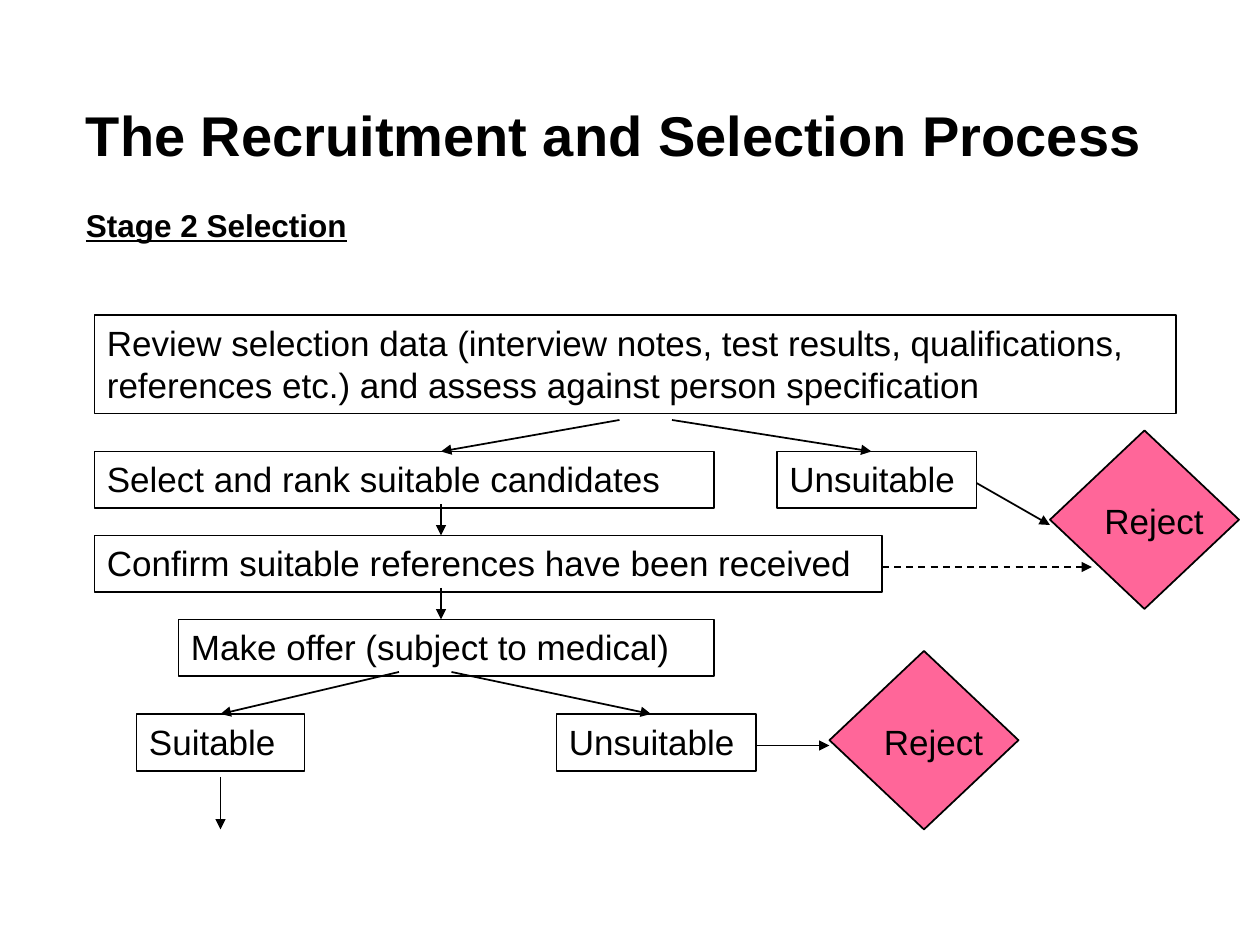
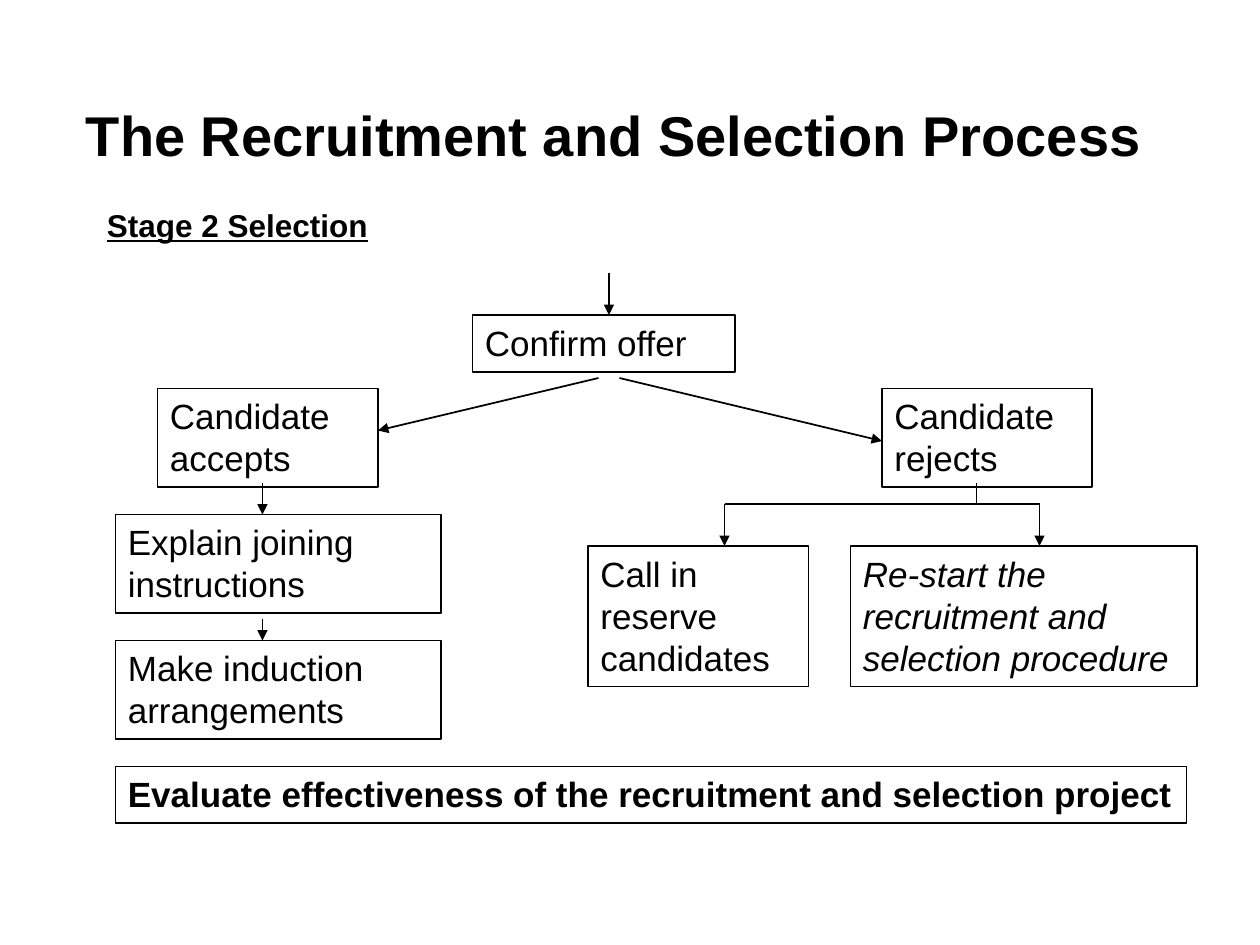
import pptx
import pptx.util
import pptx.dml.color
import pptx.enum.dml
import pptx.enum.shapes
import pptx.enum.text
import pptx.oxml.ns
import lxml.etree

SCALE = 7620
INK = "000000"
PINK = "FF6699"
FONT = "Arial"
KIND = pptx.enum.shapes.MSO_SHAPE


def px(n):
    return pptx.util.Emu(n * SCALE)


def color(code):
    return pptx.dml.color.RGBColor.from_string(code)


def write(shape, words, size=20, bold=False, italic=False, under=False):
    frame = shape.text_frame
    frame.word_wrap = True
    frame.vertical_anchor = pptx.enum.text.MSO_ANCHOR.TOP
    para = frame.paragraphs[0]
    para.alignment = pptx.enum.text.PP_ALIGN.LEFT
    run = para.add_run()
    run.text = words
    font = run.font
    font.name, font.size = FONT, pptx.util.Pt(size)
    font.bold, font.italic, font.underline = bold, italic, under
    font.color.rgb = color(INK)


def label(slide, x, y, w, h, words, **style):
    write(slide.shapes.add_textbox(px(x), px(y), px(w), px(h)), words, **style)


def outline(slide, kind, x, y, w, h, fill=None):
    shape = slide.shapes.add_shape(kind, px(x), px(y), px(w), px(h))
    shape.shadow.inherit = False
    if fill:
        shape.fill.solid()
        shape.fill.fore_color.rgb = color(fill)
    else:
        shape.fill.background()
    shape.line.color.rgb = color(INK)
    shape.line.width = pptx.util.Pt(1)
    return shape


def step(slide, x, y, w, words, rows=1, **style):
    box = outline(slide, KIND.RECTANGLE, x, y, w, 14 + 40 * rows)
    write(box, words, **style)


def link(slide, x, y, dx, dy, arrow=True, dash=False):
    line = slide.shapes.add_connector(
        pptx.enum.shapes.MSO_CONNECTOR.STRAIGHT,
        px(x), px(y), px(x + dx), px(y + dy))
    line.line.color.rgb = color(INK)
    line.line.width = pptx.util.Pt(1)
    if dash:
        line.line.dash_style = pptx.enum.dml.MSO_LINE.DASH
    qn = pptx.oxml.ns.qn
    if arrow:
        lxml.etree.SubElement(line.line._get_or_add_ln(), qn("a:tailEnd"), type="triangle")
    lxml.etree.SubElement(line._element.spPr, qn("a:effectLst"))


def reject(slide, x, y):
    outline(slide, KIND.FLOWCHART_DECISION, x, y, 180, 170, PINK)
    label(slide, x + 40, y + 60, 140, 52, "Reject")


def split(slide, x, y):
    link(slide, x, y, 0, 20, arrow=False)
    link(slide, x - 240, y + 20, 300, 0, arrow=False)
    for left in (x - 240, x + 60):
        link(slide, left, y + 20, 0, 40)


def header(slide, indent):
    label(slide, 70, 90, 1030, 76, "The Recruitment and Selection Process", size=32, bold=True)
    label(slide, indent, 190, 430, 60, "Stage 2 Selection", size=18, bold=True, under=True)


def review(slide, x, y):
    step(slide, x, y, 1030,
         "Review selection data (interview notes, test results, qualifications, "
         "references etc.) and assess against person specification", rows=2)
    step(slide, x, y + 130, 590, "Select and rank suitable candidates")
    step(slide, x + 650, y + 130, 190, "Unsuitable")
    step(slide, x, y + 210, 750, "Confirm suitable references have been received")
    reject(slide, x + 910, y + 110)
    link(slide, x + 500, y + 100, -170, 30)
    link(slide, x + 550, y + 100, 190, 30)
    link(slide, x + 840, y + 160, 70, 40)
    link(slide, x + 750, y + 240, 200, 0, dash=True)
    for top in (y + 180, y + 260):
        link(slide, x + 330, top, 0, 30)


def offer(slide, x, y):
    step(slide, x + 40, y, 510, "Make offer (subject to medical)")
    step(slide, x, y + 90, 160, "Suitable")
    step(slide, x + 400, y + 90, 190, "Unsuitable")
    reject(slide, x + 660, y + 30)
    link(slide, x + 250, y + 50, -170, 40)
    link(slide, x + 300, y + 50, 190, 40)
    link(slide, x + 590, y + 120, 70, 0)
    link(slide, x + 80, y + 150, 0, 50)


def confirm(slide, x, y):
    step(slide, x, y, 250, "Confirm offer")
    link(slide, x + 130, y - 40, 0, 40)
    link(slide, x + 120, y + 60, -210, 50)
    link(slide, x + 140, y + 60, 250, 60)


def accept(slide, x, y):
    step(slide, x + 40, y, 210, "Candidate accepts", rows=2)
    tasks = "Explain joining instructions", "Make induction arrangements"
    for i, task in enumerate(tasks, 1):
        step(slide, x, y + 120 * i, 310, task, rows=2)
    link(slide, x + 140, y + 90, 0, 30)
    link(slide, x + 140, y + 220, 0, 20)


def decline(slide, x, y):
    step(slide, x + 280, y, 200, "Candidate rejects", rows=2)
    step(slide, x, y + 150, 210, "Call in reserve candidates", rows=3)
    step(slide, x + 250, y + 150, 330,
         "Re-start the recruitment and selection procedure", rows=3, italic=True)
    split(slide, x + 370, y + 90)


def main():
    deck = pptx.Presentation()
    deck.slide_width, deck.slide_height = px(1200), px(900)
    blank = deck.slide_layouts[6]

    first = deck.slides.add_slide(blank)
    header(first, 70)
    review(first, 90, 300)
    offer(first, 130, 590)

    second = deck.slides.add_slide(blank)
    header(second, 90)
    confirm(second, 450, 300)
    accept(second, 110, 370)
    decline(second, 560, 370)
    step(second, 110, 730, 1020,
         "Evaluate effectiveness of the recruitment and selection project", bold=True)

    deck.save("out.pptx")


if __name__ == "__main__":
    main()
